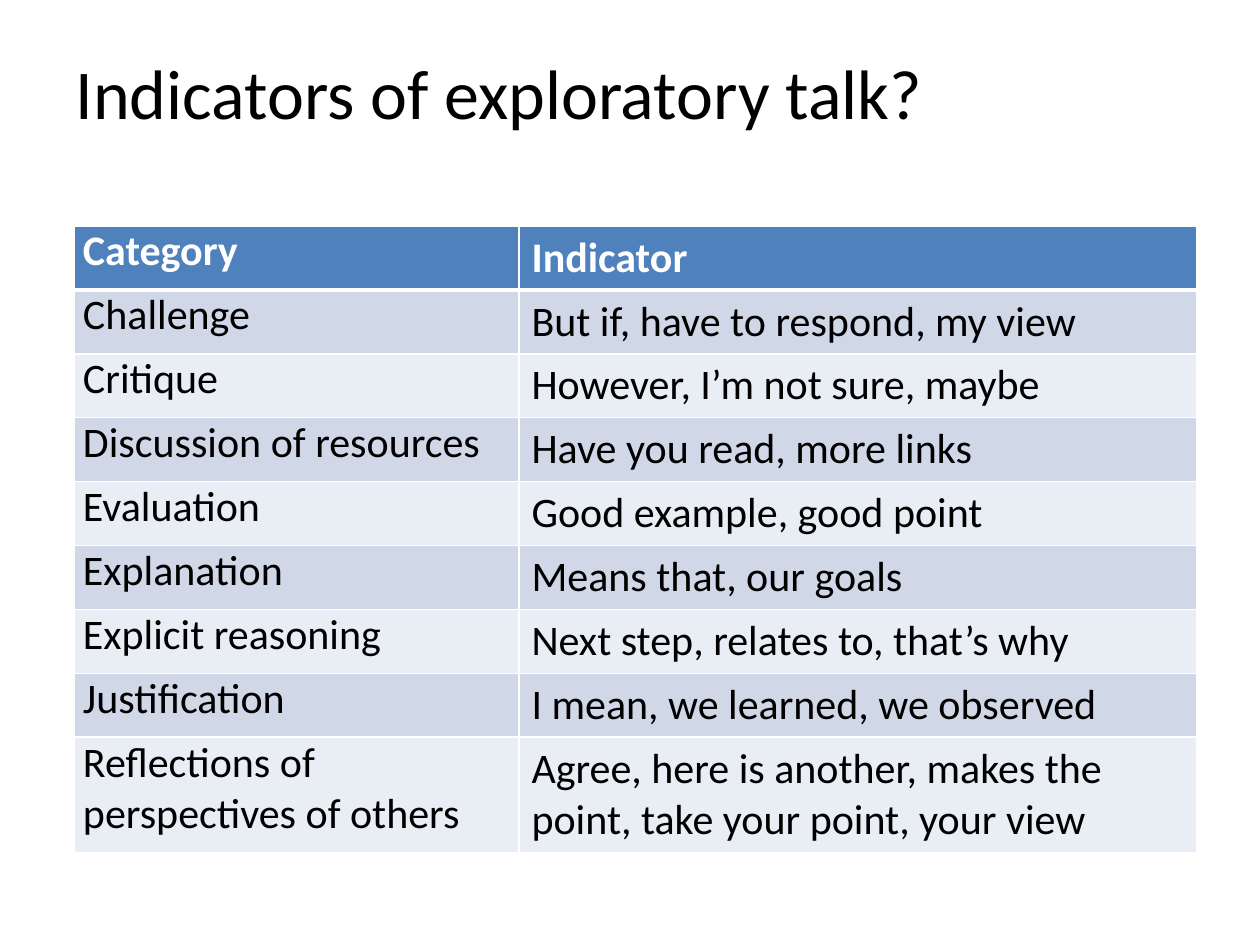
from pptx import Presentation
from pptx.dml.color import RGBColor
from pptx.enum.text import MSO_ANCHOR, PP_ALIGN
from pptx.oxml import parse_xml
from pptx.oxml.ns import nsdecls
from pptx.util import Pt

PX = 914400 // 126
FONT = "Calibri"
COLORS = {"head": "4F81BD", "odd": "D0D8E8", "even": "E9EDF4",
          "light": "FFFFFF", "dark": "000000"}
COLS = [445, 678]
ROW, LAST = 63, 102
ROWS = [
    ("Category", "Indicator"),
    ("Challenge", "But if, have to respond, my view"),
    ("Critique", "However, I’m not sure, maybe"),
    ("Discussion of resources", "Have you read, more links"),
    ("Evaluation", "Good example, good point"),
    ("Explanation", "Means that, our goals"),
    ("Explicit reasoning", "Next step, relates to, that’s why"),
    ("Justification", "I mean, we learned, we observed"),
    ("Reflections of \vperspectives of others",
     "Agree, here is another, makes the point, take your point, your view"),
]


def color(name):
    return RGBColor.from_string(COLORS[name])


def style(para, size, tone, bold=False):
    for run in para.runs:
        font = run.font
        font.name, font.size, font.bold = FONT, Pt(size), bold
        font.color.rgb = color(tone)


def add_title(slide, box, text):
    title = slide.shapes.title
    title.left, title.top, title.width, title.height = [n * PX for n in box]
    frame = title.text_frame
    frame.text = text
    frame.vertical_anchor = MSO_ANCHOR.MIDDLE
    para = frame.paragraphs[0]
    para.alignment = PP_ALIGN.LEFT
    style(para, 40, "dark")


def edge(cell, sides):
    """Draw the cell's borders, given as side letter to width in points."""
    props = cell._tc.get_or_add_tcPr()
    for side, width in sides.items():
        props.append(parse_xml(
            f'<a:ln{side} {nsdecls("a")} w="{Pt(width)}"><a:solidFill>'
            f'<a:srgbClr val="{COLORS["light"]}"/></a:solidFill></a:ln{side}>'))


def fill_cell(cell, text, row, col):
    head = row == 0
    edge(cell, {"L": 1, "R": 1, "T": 3 if row == 1 else 1, "B": 3 if head else 1})
    cell.fill.solid()
    cell.fill.fore_color.rgb = color("head" if head else "odd" if row % 2 else "even")
    if col == 0:
        cell.margin_left = cell.margin_right = 9 * PX
        cell.margin_top = cell.margin_bottom = 0
    cell.text_frame.text = text
    style(cell.text_frame.paragraphs[0], 24, "light" if head else "dark", head)


def add_grid(slide, box):
    table = slide.shapes.add_table(len(ROWS), len(COLS), *[n * PX for n in box]).table
    for col, width in zip(table.columns, COLS):
        col.width = width * PX
    for r, texts in enumerate(ROWS):
        table.rows[r].height = (LAST if r == len(ROWS) - 1 else ROW) * PX
        for c, text in enumerate(texts):
            fill_cell(table.cell(r, c), text, r, c)


def main():
    deck = Presentation()
    deck.slide_width, deck.slide_height = 1260 * PX, 945 * PX
    slide = deck.slides.add_slide(deck.slide_layouts[5])
    add_title(slide, (63, 38, 1134, 106), "Indicators of exploratory talk?")
    add_grid(slide, (74, 226, sum(COLS), ROW * (len(ROWS) - 1) + LAST))
    deck.save("out.pptx")


if __name__ == "__main__":
    main()
